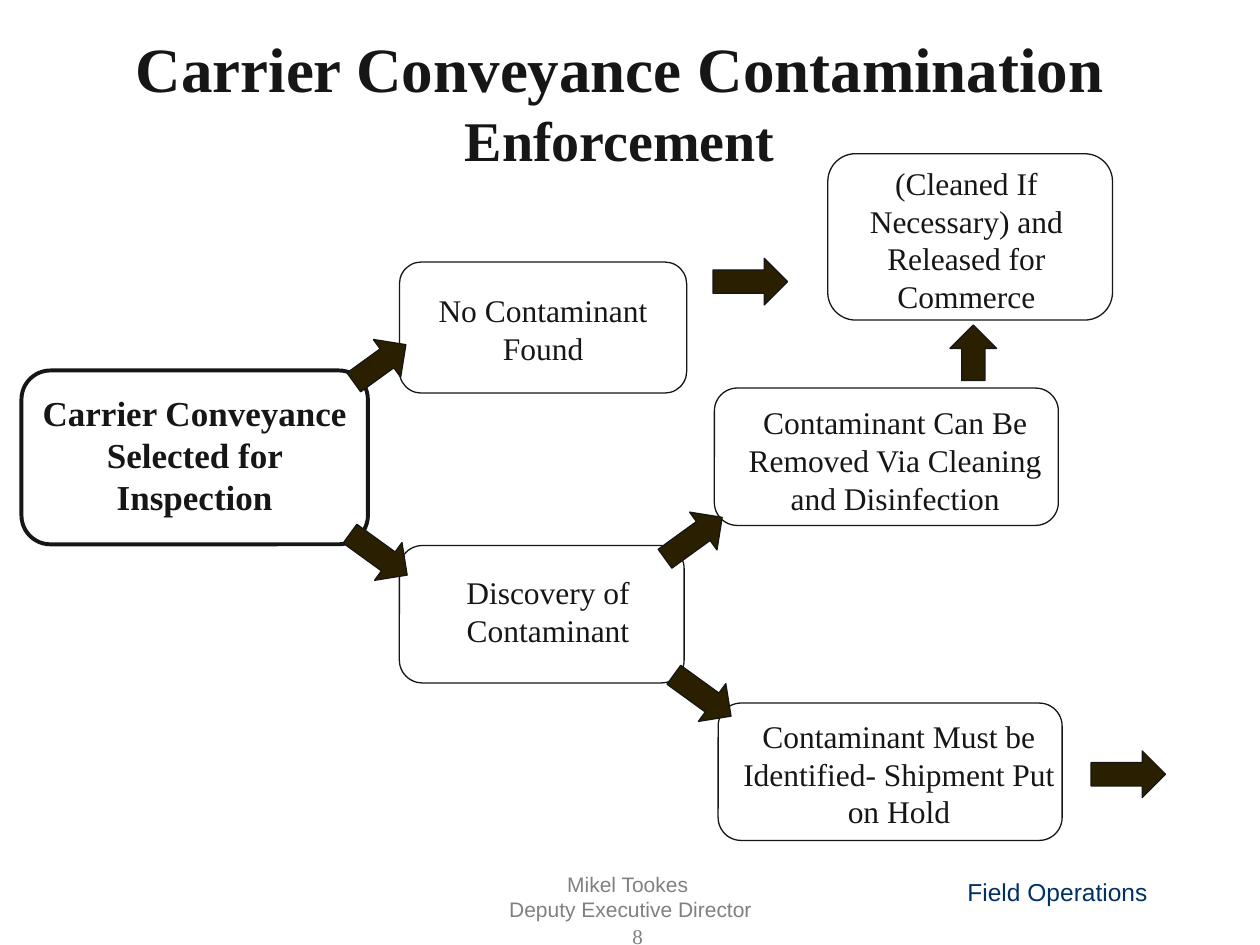
"""Build the carrier conveyance contamination enforcement flowchart slide."""
from pptx import Presentation
from pptx.dml.color import RGBColor
from pptx.enum.shapes import MSO_SHAPE
from pptx.enum.text import MSO_ANCHOR, MSO_AUTO_SIZE, PP_ALIGN
from pptx.util import Inches, Pt

ROUNDED = MSO_SHAPE.ROUNDED_RECTANGLE
DOWN_ARROW = MSO_SHAPE.DOWN_ARROW
BOTTOM, TOP = MSO_ANCHOR.BOTTOM, MSO_ANCHOR.TOP
FIXED_SIZE = MSO_AUTO_SIZE.NONE
CENTER, LEFT = PP_ALIGN.CENTER, PP_ALIGN.LEFT

INK = RGBColor(0x16, 0x16, 0x16)
ARROW_BROWN = RGBColor(0x2A, 0x20, 0x00)
FOOTER_GRAY = RGBColor(0x80, 0x80, 0x80)
NAVY = RGBColor(0x00, 0x31, 0x64)
SERIF, SANS = "Times New Roman", "Arial"

ARROW_WIDTH = 0.37
RIGHT, UP, UP_RIGHT, DOWN_RIGHT = 270, 180, 234.1, 305.9


def write_lines(shape, lines, color, font_name, alignment=CENTER, wrap=True, anchor=TOP):
    frame = shape.text_frame
    frame.auto_size = FIXED_SIZE
    frame.word_wrap = wrap
    frame.vertical_anchor = anchor
    for index, (text, size, bold) in enumerate(lines):
        paragraph = frame.add_paragraph() if index else frame.paragraphs[0]
        paragraph.alignment = alignment
        paragraph.space_before = Pt(0)
        run = paragraph.add_run()
        run.text = text
        run.font.color.rgb = color
        values = {"name": font_name, "size": Pt(size), "bold": bold}
        for attribute, value in values.items():
            setattr(run.font, attribute, value)


def add_outlined(kind, position, line_width):
    shape = slide.shapes.add_shape(kind, *map(Inches, position))
    shape.shadow.inherit = False
    shape.fill.background()
    shape.line.color.rgb = INK
    shape.line.width = Pt(line_width)
    return shape


presentation = Presentation()
presentation.slide_width = Inches(10)
presentation.slide_height = Inches(7.5)
slide = presentation.slides.add_slide(presentation.slide_layouts[5])

title = slide.shapes.title
title.left, title.top, title.width, title.height = map(Inches, (0.42, 0.7, 9, 0.72))
title_lines = [("Carrier Conveyance Contamination", 36, True), ("Enforcement", 32, True)]
write_lines(title, title_lines, INK, SERIF, anchor=BOTTOM)

steps = [
    ("Carrier Conveyance Selected for Inspection", 20, True, 2.25,
     (0.17, 2.94, 2.75, 1.38), (0.17, 3.06, 2.75, 1.11)),
    ("No Contaminant Found", 18, False, 0.75,
     (3.17, 2.08, 2.28, 1.04), (3.17, 2.26, 2.28, 0.74)),
    ("Discovery of Contaminant", 18, False, 0.75,
     (3.17, 4.33, 2.26, 1.09), (3.22, 4.5, 2.26, 0.71)),
    ("(Cleaned If Necessary) and Released for Commerce", 18, False, 0.75,
     (6.57, 1.22, 2.26, 1.32), (6.43, 1.25, 2.48, 1.31)),
    ("Contaminant Can Be Removed Via Cleaning and Disinfection", 18, False, 0.75,
     (5.67, 3.08, 2.73, 1.09), (5.74, 3.15, 2.73, 1.01)),
    ("Contaminant Must be Identified- Shipment Put on Hold", 18, False, 0.75,
     (5.7, 5.58, 2.73, 1.09), (5.77, 5.64, 2.73, 1.11)),
]
for text, size, bold, line_width, box_position, text_position in steps:
    add_outlined(ROUNDED, box_position, line_width)
    label = slide.shapes.add_textbox(*map(Inches, text_position))
    write_lines(label, [(text, size, bold)], INK, SERIF)

arrows = [
    (2.83, 2.63, 0.51, UP_RIGHT),
    (2.82, 4.12, 0.56, DOWN_RIGHT),
    (5.32, 3.99, 0.56, UP_RIGHT),
    (5.39, 5.24, 0.56, DOWN_RIGHT),
    (5.77, 1.94, 0.59, RIGHT),
    (7.54, 2.58, 0.44, UP),
    (8.77, 5.85, 0.59, RIGHT),
]
for left, top, length, rotation in arrows:
    arrow = add_outlined(DOWN_ARROW, (left, top, ARROW_WIDTH, length), 0.75)
    arrow.fill.solid()
    arrow.fill.fore_color.rgb = ARROW_BROWN
    arrow.rotation = rotation

presenter_lines = [("Mikel Tookes ", 12, False), ("Deputy Executive Director", 12, False)]
footers = [
    ((3.42, 6.87, 3.17, 0.47), presenter_lines, FOOTER_GRAY, SANS, CENTER, True),
    ((4.92, 7.28, 0.5, 0.3), [("8", 12, False)], FOOTER_GRAY, SERIF, LEFT, True),
    ((7.58, 6.91, 1.64, 0.34), [("Field Operations", 14, False)], NAVY, SANS, LEFT, False),
]
for position, lines, color, font_name, alignment, wrap in footers:
    footer = slide.shapes.add_textbox(*map(Inches, position))
    write_lines(footer, lines, color, font_name, alignment, wrap)

presentation.save("out.pptx")
